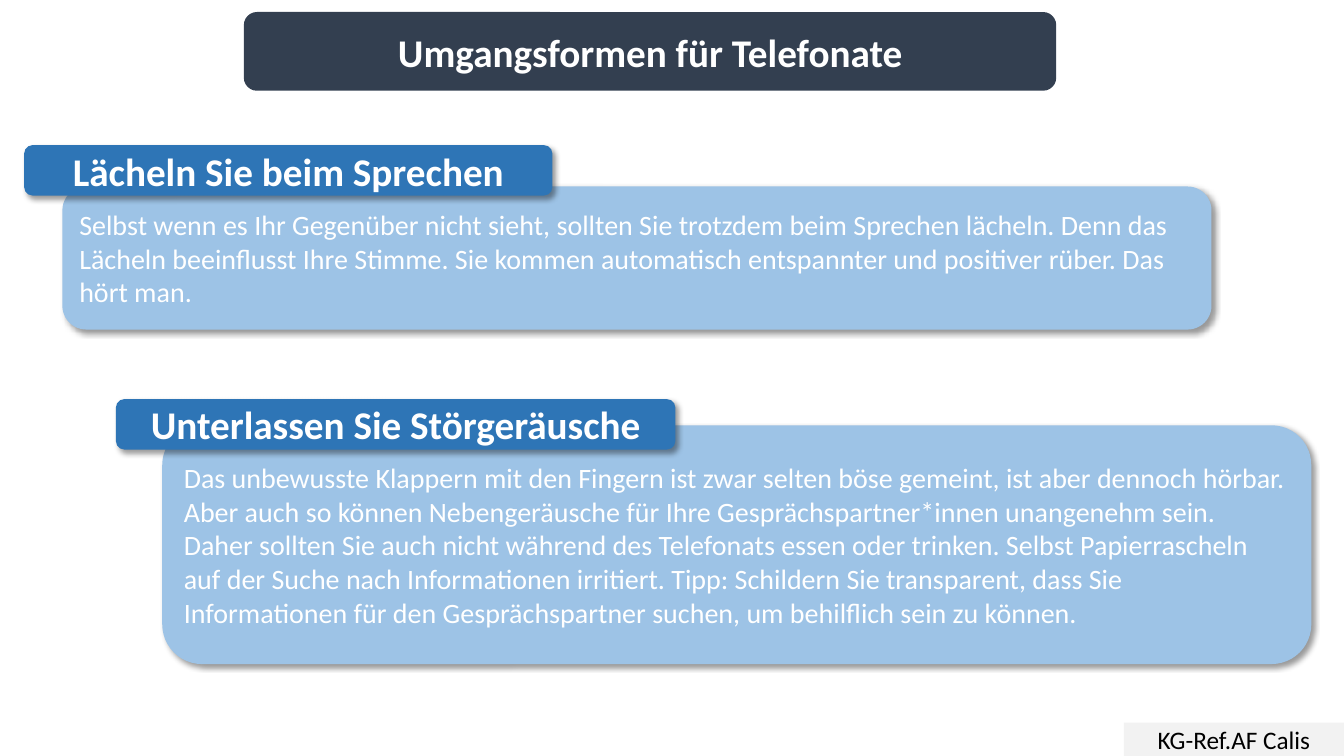
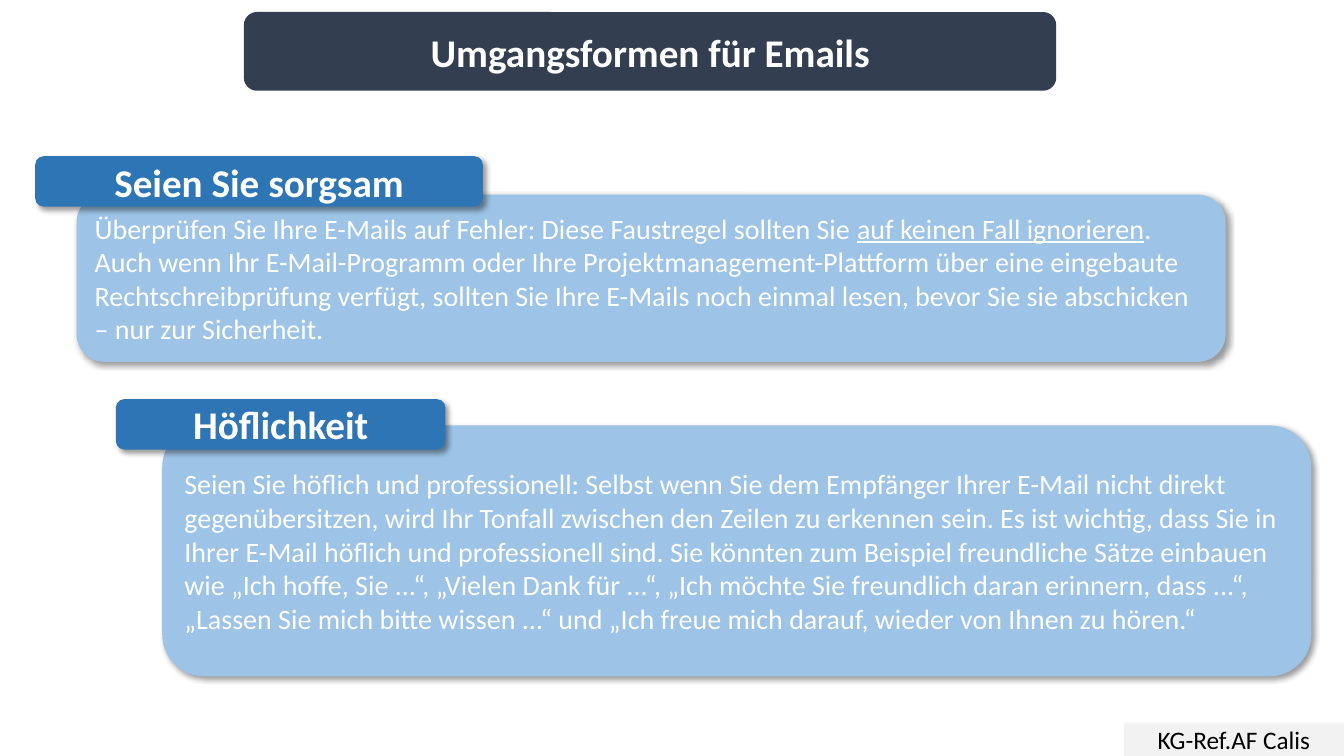
from pptx import Presentation
from pptx.dml.color import RGBColor
from pptx.enum.shapes import MSO_SHAPE as Preset
from pptx.enum.text import MSO_ANCHOR as Anchor, MSO_AUTO_SIZE as AutoSize, PP_ALIGN as Align
from pptx.oxml import parse_xml
from pptx.util import Pt

SLIDE_WIDTH, SLIDE_HEIGHT = 960, 540
TITLE_BOX = (174.2, 8.6, 580.3, 56.2)
FOOTER_BOX = (802.8, 516.2, 157.2, 23.8)
LABEL_HEIGHT = 36
BODY_WIDTH = 820.8

NAVY, BLUE, LIGHT_BLUE = "333F50", "2E75B6", "9DC3E6"
GREY, WHITE, BLACK = "F2F2F2", "FFFFFF", "000000"

HEADING = {"size": Pt(28), "bold": True, "name": "Calibri"}
BODY = {"size": Pt(20), "bold": False, "name": "Calibri"}
FOOTER = {"size": Pt(18), "bold": False, "name": "Calibri"}

FOOTER_TEXT = "KG-Ref.AF Calis"
SHADOW = (
    '<a:outerShdw xmlns:a="http://schemas.openxmlformats.org/drawingml/2006/main" '
    'blurRad="50800" dist="38100" dir="2700000" algn="tl" rotWithShape="0">'
    '<a:srgbClr val="000000"><a:alpha val="40000"/></a:srgbClr></a:outerShdw>'
)


def color(value):
    return RGBColor.from_string(value)


class Deck:
    """Holds the shared style and the current slide."""

    def __init__(self):
        self.presentation = Presentation()
        self.presentation.slide_width = Pt(SLIDE_WIDTH)
        self.presentation.slide_height = Pt(SLIDE_HEIGHT)
        self.slide = None

    def add_slide(self, title):
        layout = self.presentation.slide_layouts[5]
        self.slide = self.presentation.slides.add_slide(layout)
        self.footer()
        self.title(title)

    def box(self, preset, bounds, fill, shadow=False):
        shape = self.slide.shapes.add_shape(preset, *map(Pt, bounds))
        shape.fill.solid()
        shape.fill.fore_color.rgb = color(fill)
        shape.line.fill.background()
        shape.shadow.inherit = False
        if shadow:
            effects = shape.element.spPr.find("{*}effectLst")
            effects.append(parse_xml(SHADOW))
        return shape

    def set_text(self, shape, text, style, ink=WHITE, align=Align.CENTER):
        """Fill a shape with text; parts between underscores are underlined."""
        frame = shape.text_frame
        frame.word_wrap = True
        frame.auto_size = AutoSize.NONE
        frame.vertical_anchor = Anchor.MIDDLE
        paragraph = frame.paragraphs[0]
        paragraph.alignment = align
        for index, part in enumerate(text.split("_")):
            run = paragraph.add_run()
            run.text = part
            for name, value in style.items():
                setattr(run.font, name, value)
            run.font.color.rgb = color(ink)
            if index % 2:
                run.font.underline = True

    def title(self, text):
        # The band goes behind the title placeholder
        band = self.box(Preset.ROUNDED_RECTANGLE, TITLE_BOX, NAVY)
        title = self.slide.shapes.title
        title.element.addprevious(band.element)
        title.left, title.top, title.width, title.height = map(Pt, TITLE_BOX)
        self.set_text(title, text, HEADING)

    def footer(self):
        shape = self.box(Preset.RECTANGLE, FOOTER_BOX, GREY)
        self.set_text(shape, FOOTER_TEXT, FOOTER, BLACK)

    def card(self, label, label_bounds, text, body_bounds):
        """Body panel (left, top, height) under a label (left, top, width)."""
        left, top, height = body_bounds
        body = self.box(Preset.ROUNDED_RECTANGLE, (left, top, BODY_WIDTH, height),
                        LIGHT_BLUE, shadow=True)
        self.set_text(body, text, BODY, align=Align.LEFT)
        tab = self.box(Preset.ROUNDED_RECTANGLE, (*label_bounds, LABEL_HEIGHT),
                       BLUE, shadow=True)
        self.set_text(tab, label, HEADING)


# Each slide: title and its cards
SLIDES = [
    ("Umgangsformen für Telefonate", [
        ("Lächeln Sie beim Sprechen", (17.3, 103.7, 377.3),
         "Selbst wenn es Ihr Gegenüber nicht sieht, sollten Sie trotzdem beim "
         "Sprechen lächeln. Denn das Lächeln beeinflusst Ihre Stimme. Sie kommen "
         "automatisch entspannter und positiver rüber. Das hört man.",
         (44.6, 133.2, 102.2)),
        ("Unterlassen Sie Störgeräusche", (82.8, 285.1, 399.6),
         "Das unbewusste Klappern mit den Fingern ist zwar selten böse gemeint, ist "
         "aber dennoch hörbar. Aber auch so können Nebengeräusche für Ihre "
         "Gesprächspartner*innen unangenehm sein. Daher sollten Sie auch nicht "
         "während des Telefonats essen oder trinken. Selbst Papierrascheln auf der "
         "Suche nach Informationen irritiert. Tipp: Schildern Sie transparent, dass "
         "Sie Informationen für den Gesprächspartner suchen, um behilflich sein zu "
         "können.",
         (115.9, 303.8, 170.6)),
    ]),
    ("Umgangsformen für Emails", [
        ("Seien Sie sorgsam", (25.2, 111.6, 319.7),
         "Überprüfen Sie Ihre E-Mails auf Fehler: Diese Faustregel sollten Sie "
         "_auf keinen Fall ignorieren_. Auch wenn Ihr E-Mail-Programm oder Ihre "
         "Projektmanagement-Plattform über eine eingebaute Rechtschreibprüfung "
         "verfügt, sollten Sie Ihre E-Mails noch einmal lesen, bevor Sie sie "
         "abschicken – nur zur Sicherheit.",
         (54.7, 139, 119.5)),
        ("Höflichkeit", (82.8, 285.1, 235.4),
         "Seien Sie höflich und professionell: Selbst wenn Sie dem Empfänger Ihrer "
         "E-Mail nicht direkt gegenübersitzen, wird Ihr Tonfall zwischen den Zeilen "
         "zu erkennen sein. Es ist wichtig, dass Sie in Ihrer E-Mail höflich und "
         "professionell sind. Sie könnten zum Beispiel freundliche Sätze einbauen "
         "wie „Ich hoffe, Sie ...“, „Vielen Dank für ...“, „Ich möchte Sie "
         "freundlich daran erinnern, dass ...“, „Lassen Sie mich bitte wissen ...“ "
         "und „Ich freue mich darauf, wieder von Ihnen zu hören.“",
         (115.9, 303.8, 179.3)),
    ]),
]


def main():
    deck = Deck()
    for title, cards in SLIDES:
        deck.add_slide(title)
        for card in cards:
            deck.card(*card)
    deck.presentation.save("out.pptx")


if __name__ == "__main__":
    main()
